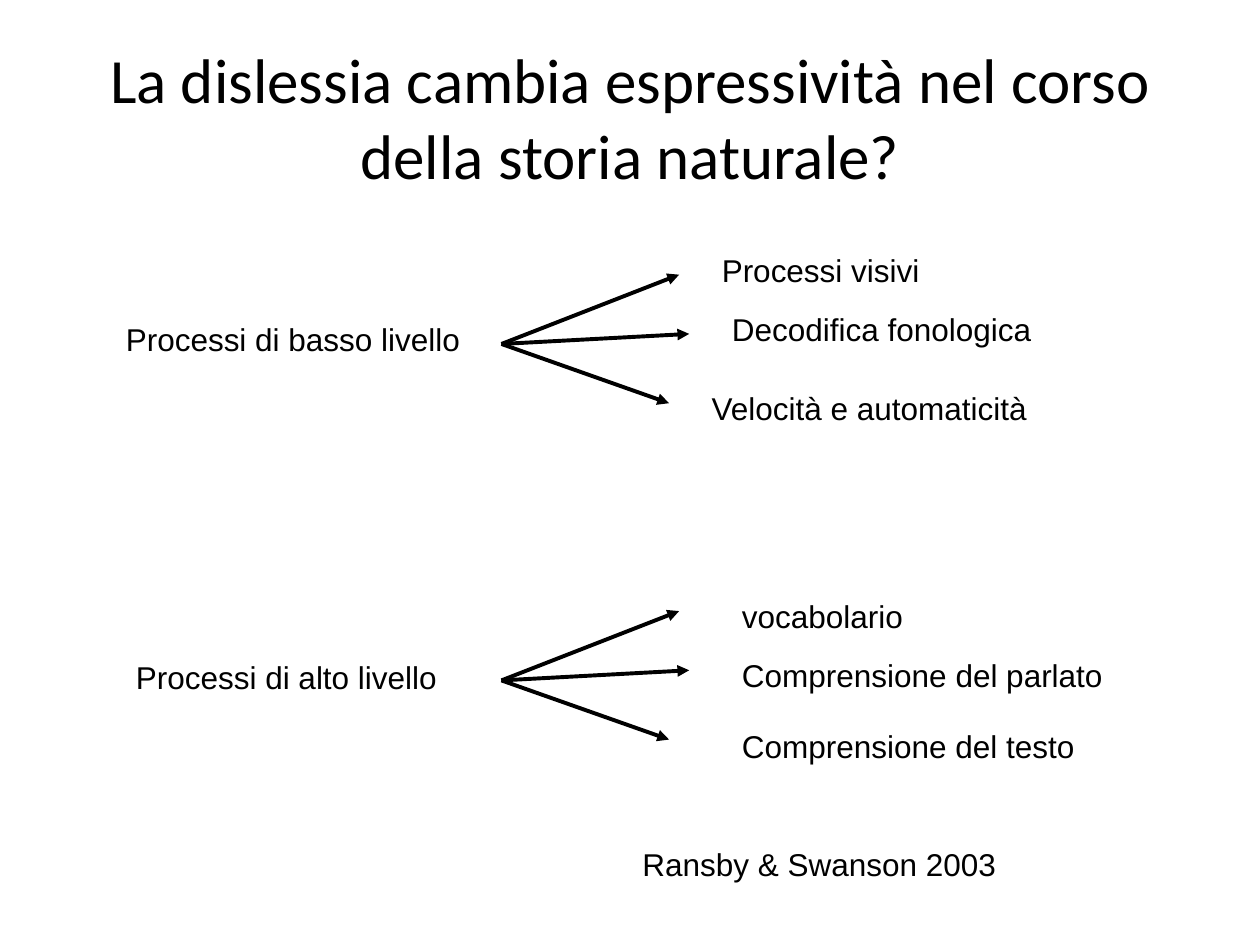
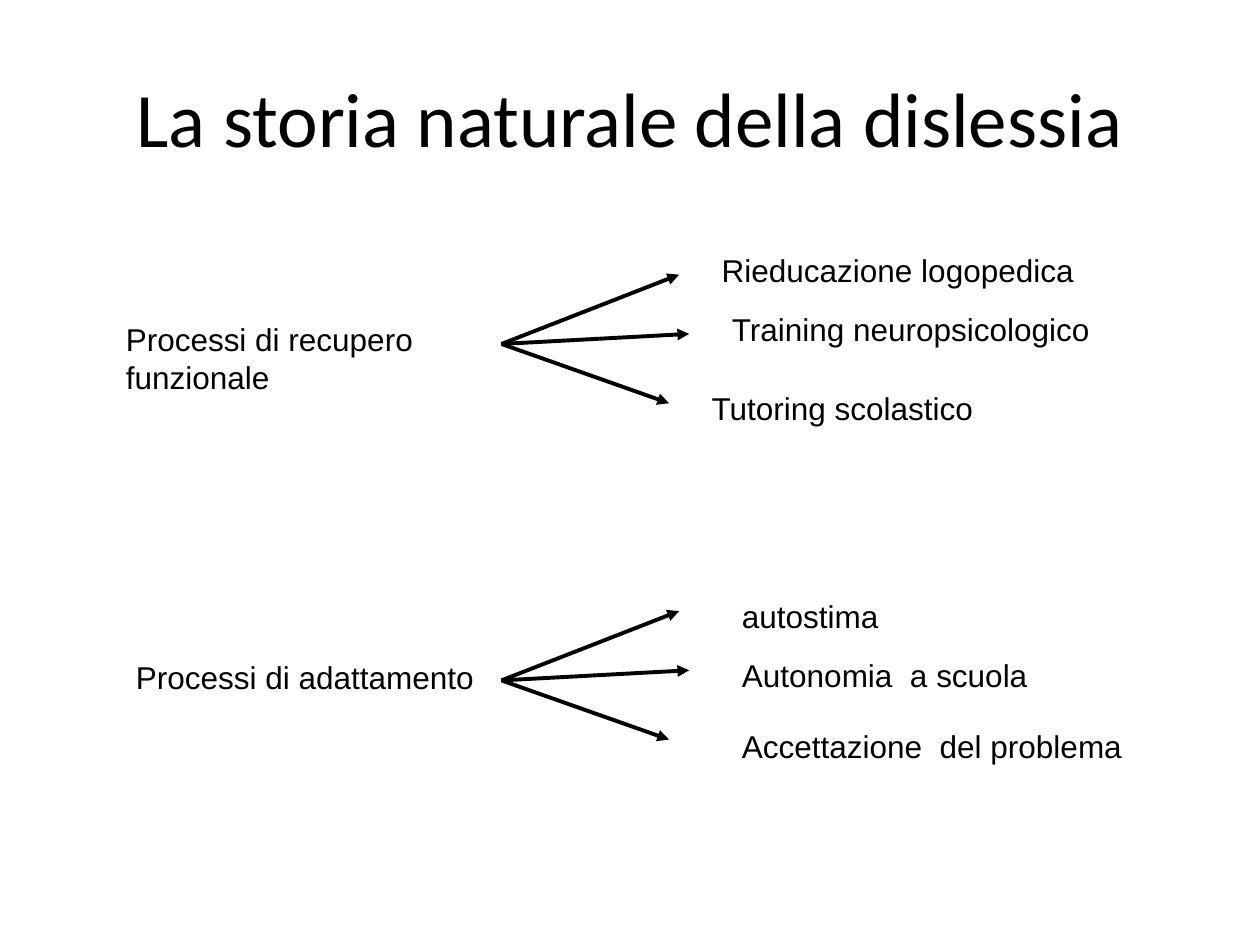
from dataclasses import dataclass

from lxml import etree
from pptx import Presentation
from pptx import util as u
from pptx.dml.color import RGBColor
from pptx.enum import shapes, text
from pptx.oxml.ns import qn


@dataclass(frozen=True)
class Theme:
    ink: RGBColor = RGBColor(0, 0, 0)
    paper: RGBColor = RGBColor(255, 255, 255)
    title_font: str = "Calibri"
    body_font: str = "Arial"
    body_size: int = 18
    arrow_width: float = 2.25


@dataclass(frozen=True)
class Label:
    words: str
    width: float
    height: float = 0.4


@dataclass(frozen=True)
class FanLayout:
    """Places, in inches, of a process, its arrow origin and its three topics."""
    process_at: tuple[float, float]
    origin: tuple[float, float]
    topics_at: tuple[tuple[float, float], ...]


@dataclass(frozen=True)
class Fan:
    process: Label
    topics: tuple[Label, ...]


@dataclass(frozen=True)
class Page:
    title: str
    title_size: int
    fans: tuple[Fan, Fan]
    citation: Label | None = None


THEME = Theme()
ARROW_REACH = ((1.41, -0.55), (1.33, 0.47), (1.49, -0.08))
CITATION_AT = (5, 6.66)
FAN_LAYOUTS = (
    FanLayout((0.9, 2.49), (3.98, 2.73), ((5.63, 1.94), (5.71, 2.41), (5.55, 3.04))),
    FanLayout((0.98, 5.17), (3.98, 5.4), ((5.79, 4.69), (5.79, 5.16), (5.79, 5.72))),
)

PAGES = (
    Page(
        "La dislessia cambia espressività nel corso della storia naturale?", 36,
        (
            Fan(Label("Processi di basso livello", 2.99), (
                Label("Processi visivi", 1.89),
                Label("Decodifica fonologica", 2.84),
                Label("Velocità e automaticità", 2.76))),
            Fan(Label("Processi di alto livello", 2.76), (
                Label("vocabolario", 2.99),
                Label("Comprensione del parlato", 3.31),
                Label("Comprensione del testo", 3.07))),
        ),
        Label("Ransby & Swanson 2003", 3.31),
    ),
    Page(
        "La storia naturale della dislessia", 44,
        (
            Fan(Label("Processi di recupero funzionale", 2.99, 0.7), (
                Label("Rieducazione logopedica", 3.47),
                Label("Training neuropsicologico", 3.39),
                Label("Tutoring scolastico", 2.76))),
            Fan(Label("Processi di adattamento", 2.99), (
                Label("autostima", 2.99),
                Label("Autonomia  a scuola", 3.31),
                Label("Accettazione  del problema", 3.62))),
        ),
    ),
)


def write_text(frame, words: str, *, font: str = THEME.body_font,
               size: int = THEME.body_size, align=text.PP_ALIGN.LEFT,
               anchor=text.MSO_ANCHOR.TOP,
               fit=text.MSO_AUTO_SIZE.SHAPE_TO_FIT_TEXT) -> None:
    frame.word_wrap = True
    frame.auto_size = fit
    frame.vertical_anchor = anchor
    paragraph = frame.paragraphs[0]
    paragraph.alignment = align
    run = paragraph.add_run()
    run.text = words
    run.font.name = font
    run.font.size = u.Pt(size)
    run.font.color.rgb = THEME.ink


def add_title(slide, page: Page) -> None:
    title = slide.shapes.title
    title.left, title.top = u.Inches(0.5), u.Inches(0.3)
    title.width, title.height = u.Inches(9), u.Inches(1.25)
    write_text(title.text_frame, page.title, font=THEME.title_font,
               size=page.title_size, align=text.PP_ALIGN.CENTER,
               anchor=text.MSO_ANCHOR.MIDDLE, fit=text.MSO_AUTO_SIZE.NONE)


def add_label(slide, label: Label, at: tuple[float, float]) -> None:
    box = slide.shapes.add_textbox(
        *(u.Inches(value) for value in (*at, label.width, label.height)))
    write_text(box.text_frame, label.words)


def add_arrows(slide, origin: tuple[float, float]) -> None:
    """Group the arrows that spread from one origin."""
    group = slide.shapes.add_group_shape()
    x, y = origin
    for across, down in ARROW_REACH:
        arrow = group.shapes.add_connector(
            shapes.MSO_CONNECTOR.STRAIGHT, u.Inches(x), u.Inches(y),
            u.Inches(x + across), u.Inches(y + down))
        arrow.line.color.rgb = THEME.ink
        arrow.line.width = u.Pt(THEME.arrow_width)
        etree.SubElement(arrow.line._get_or_add_ln(), qn("a:tailEnd"), type="triangle")
        etree.SubElement(arrow._element.spPr, qn("a:effectLst"))


def add_fan(slide, fan: Fan, layout: FanLayout) -> None:
    add_label(slide, fan.process, layout.process_at)
    add_arrows(slide, layout.origin)
    for topic, at in zip(fan.topics, layout.topics_at):
        add_label(slide, topic, at)


def add_page(presentation, page: Page) -> None:
    slide = presentation.slides.add_slide(
        presentation.slide_layouts.get_by_name("Title Only"))
    slide.background.fill.solid()
    slide.background.fill.fore_color.rgb = THEME.paper
    add_title(slide, page)
    for fan, layout in zip(page.fans, FAN_LAYOUTS):
        add_fan(slide, fan, layout)
    if page.citation:
        add_label(slide, page.citation, CITATION_AT)


def main() -> None:
    presentation = Presentation()
    presentation.slide_width = u.Inches(10)
    presentation.slide_height = u.Inches(7.5)
    for page in PAGES:
        add_page(presentation, page)
    presentation.save("out.pptx")


if __name__ == "__main__":
    main()
